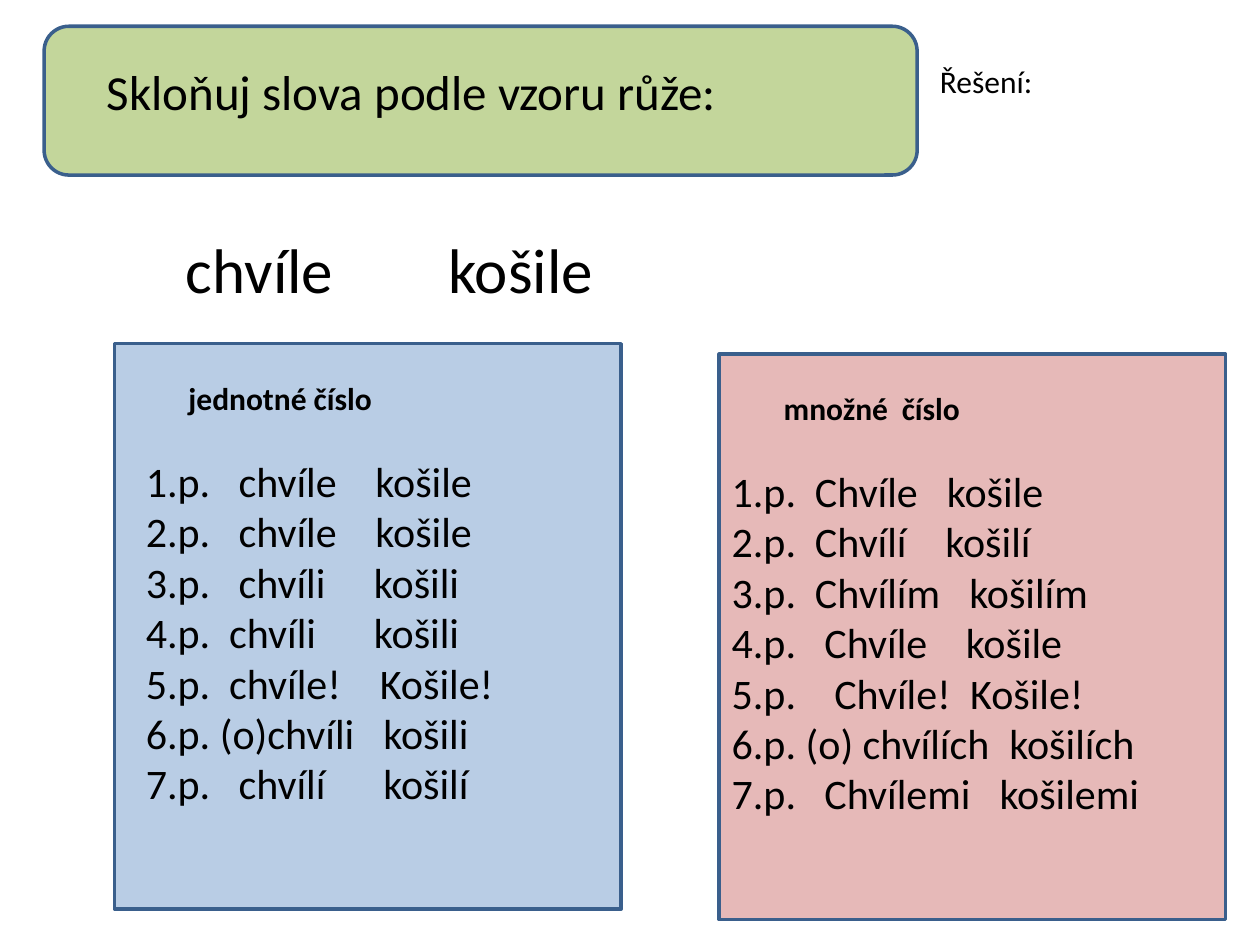
from dataclasses import dataclass

from lxml.etree import SubElement
from pptx import Presentation
from pptx.dml.color import RGBColor
from pptx.enum.shapes import MSO_SHAPE as Shape
from pptx.oxml.ns import qn
from pptx.util import Cm, Pt


@dataclass(frozen=True)
class Theme:
    font: str = "Calibri"
    text: str = "000000"
    outline: str = "3A5F8C"
    green: str = "C3D69B"
    blue: str = "B9CDE5"
    pink: str = "E6B9B8"
    small: int = 18
    body: int = 24
    title: int = 28
    words: int = 36


# Each row: text with tabs, then its tab stops in centimetres.
SINGULAR = [
    ("\tjednotné číslo", 0.86),
    ("1.p.\tchvíle\tkošile", 1.87, 4.63),
    ("2.p.\tchvíle\tkošile", 1.87, 4.63),
    ("3.p.\tchvíli\tkošili", 1.87, 4.6),
    ("4.p.\tchvíli\tkošili", 1.68, 4.6),
    ("5.p.\tchvíle!\tKošile!", 1.68, 4.72),
    ("6.p. (o)chvíli\tkošili", 4.79),
    ("7.p.\tchvílí\tkošilí", 1.87, 4.79),
]
PLURAL = [
    ("\tmnožné\tčíslo", 1.05, 3.43),
    ("1.p.\tChvíle\tkošile", 1.68, 4.34),
    ("2.p.\tChvílí\tkošilí", 1.68, 4.31),
    ("3.p.\tChvílím\tkošilím", 1.68, 4.79),
    ("4.p.\tChvíle\tkošile", 1.87, 4.72),
    ("5.p.\tChvíle!\tKošile!", 2.07, 4.81),
    ("6.p. (o) chvílích\tkošilích", 5.6),
    ("7.p.\tChvílemi\tkošilemi", 1.87, 5.4),
]


class SlideBuilder:
    def __init__(self, prs, theme):
        self.theme = theme
        self.s = prs.slides.add_slide(prs.slide_layouts[6])

    def panel(self, kind, box, fill):
        sp = self.s.shapes.add_shape(kind, *map(Cm, box))
        sp.shadow.inherit = False
        sp.fill.solid()
        sp.fill.fore_color.rgb = RGBColor.from_string(fill)
        sp.line.color.rgb = RGBColor.from_string(self.theme.outline)
        sp.line.width = Pt(2)

    def textbox(self, box):
        tf = self.s.shapes.add_textbox(*map(Cm, box)).text_frame
        tf.word_wrap = True
        return tf

    def fill_paragraph(self, p, text, size, tabs=(), bold=False):
        if tabs:
            tab_list = SubElement(p._p.get_or_add_pPr(), qn("a:tabLst"))
            for pos in tabs:
                SubElement(tab_list, qn("a:tab"), pos=str(Cm(pos)), algn="l")
        r = p.add_run()
        r.text = text
        formats = {"name": self.theme.font, "size": Pt(size), "bold": bold}
        for name, value in formats.items():
            setattr(r.font, name, value)
        r.font.color.rgb = RGBColor.from_string(self.theme.text)

    def label(self, box, text, size, tabs=()):
        self.fill_paragraph(self.textbox(box).paragraphs[0], text, size, tabs)

    def declension(self, box, rows):
        """Bold heading followed by the seven cases."""
        tf = self.textbox(box)
        for i, (text, *tabs) in enumerate(rows):
            p = tf.add_paragraph() if i else tf.paragraphs[0]
            if i == 1:
                p.space_before = Pt(22)
            size = self.theme.body if i else self.theme.small
            self.fill_paragraph(p, text, size, tabs, bold=not i)


def main():
    prs = Presentation()
    prs.slide_width, prs.slide_height = Cm(25.4), Cm(19.05)
    theme = Theme()
    b = SlideBuilder(prs, theme)

    b.panel(Shape.ROUNDED_RECTANGLE, (0.89, 0.53, 17.6, 3), theme.green)
    b.label((1.9, 1.12, 17.6, 1.45), "Skloňuj slova podle vzoru růže:", theme.title)
    b.panel(Shape.RECTANGLE, (14.5, 7.14, 10.21, 11.4), theme.pink)
    b.panel(Shape.RECTANGLE, (2.31, 6.93, 10.21, 11.4), theme.blue)
    b.declension((2.69, 7.52, 9.6, 10.77), SINGULAR)
    b.declension((14.5, 7.72, 9.2, 10.77), PLURAL)
    b.label((3.5, 4.52, 12.2, 1.8), "chvíle\tkošile", theme.words, [5.29])
    b.label((18.7, 1.12, 5.2, 1.02), "Řešení:", theme.small)

    prs.save("out.pptx")


if __name__ == "__main__":
    main()
